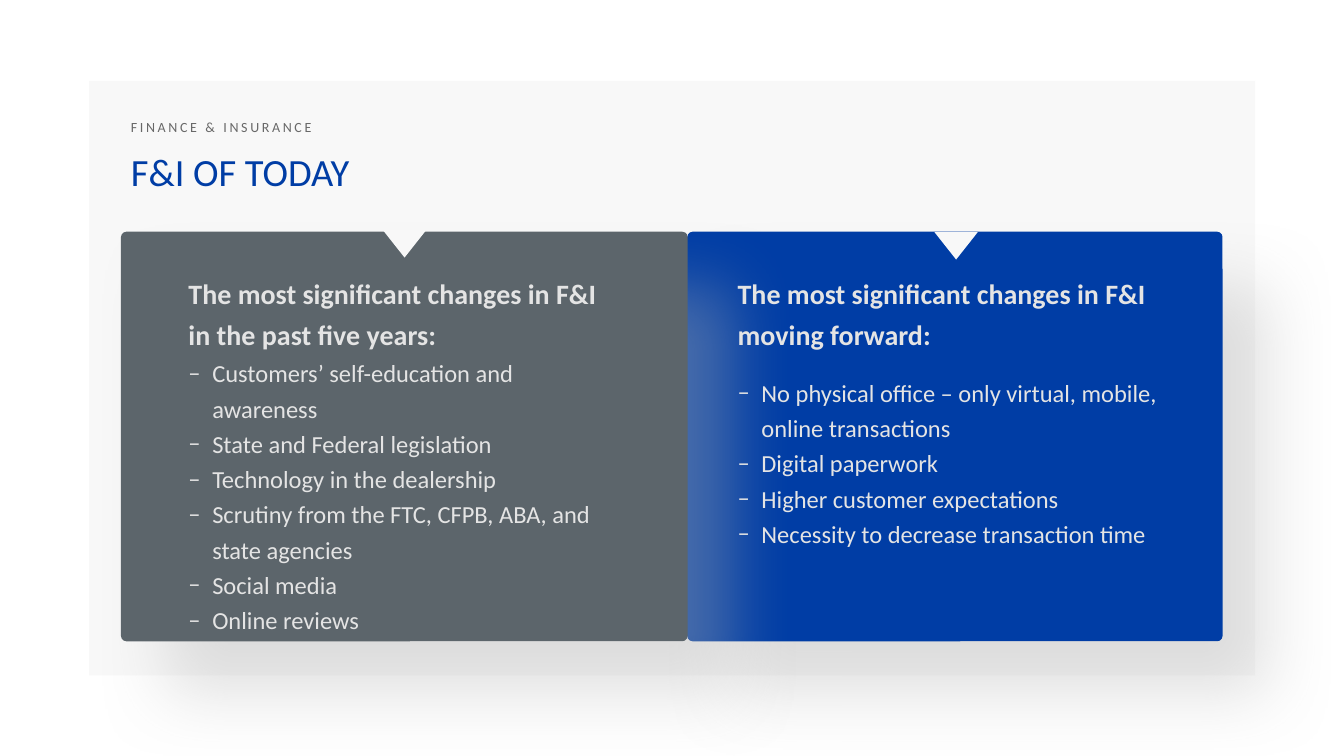
from lxml.etree import SubElement as Sub
from pptx import Presentation
from pptx.dml.color import RGBColor
from pptx.enum.shapes import MSO_SHAPE as Geo
from pptx.enum.text import MSO_AUTO_SIZE as Fit
from pptx.oxml.ns import qn
from pptx.util import Cm, Pt

PALE = RGBColor(0xF8, 0xF8, 0xF8)
BLUE = RGBColor(0x00, 0x3D, 0xA5)
SLATE = RGBColor(0x5C, 0x65, 0x6B)
GREY = RGBColor(0x68, 0x68, 0x68)
LIGHT = RGBColor(0xE4, 0xE4, 0xE4)
SHADE = RGBColor(0xB4, 0xB4, 0xB4)

TITLE = {"size": Pt(27.5)}
LABEL = {"size": Pt(10)}
HEAD = {"size": Pt(20), "bold": True}
ITEM = {"size": Pt(17.5)}

PAST = [
    "Customers’ self-education and awareness",
    "State and Federal legislation",
    "Technology in the dealership",
    "Scrutiny from the FTC, CFPB, ABA, and state agencies",
    "Social media",
    "Online reviews",
]
NEXT = [
    "No physical office – only virtual, mobile, online transactions",
    "Digital paperwork",
    "Higher customer expectations",
    "Necessity to decrease transaction time",
]


def add_box(slide, geo, box, color):
    shape = slide.shapes.add_shape(geo, *map(Cm, box))
    shape.shadow.inherit = False
    shape.fill.solid()
    shape.fill.fore_color.rgb = color
    shape.line.fill.background()
    return shape


def add_card(slide, left, width, color):
    card = add_box(slide, Geo.ROUNDED_RECTANGLE, (left, 5.84, width, 10.32), color)
    card.adjustments[0] = 0.013
    effects = card.element.spPr.find(qn("a:effectLst"))
    glow = Sub(effects, qn("a:outerShdw"), blurRad=str(Pt(50)),
               dist=str(Pt(50)), dir=str(50 * 60000), rotWithShape="0")
    tint = Sub(glow, qn("a:srgbClr"), val=str(SHADE))
    Sub(tint, qn("a:alpha"), val="40000")


def add_notch(slide, left, top):
    notch = add_box(slide, Geo.ISOSCELES_TRIANGLE, (left, top, 1.09, 0.69), PALE)
    notch.rotation = 180


def add_text(slide, box, lines, style, color, lead=None):
    frame = slide.shapes.add_textbox(*map(Cm, box)).text_frame
    frame.word_wrap = True
    frame.auto_size = Fit.SHAPE_TO_FIT_TEXT
    frame.text = "\n".join(lines)
    for para in frame.paragraphs:
        para.line_spacing = lead
        font = para.runs[0].font
        font.name = "Calibri"
        font.color.rgb = color
        for key, value in style.items():
            setattr(font, key, value)
    return frame


def add_list(slide, box, items):
    frame = add_text(slide, box, items, ITEM, LIGHT, 1.2)
    for para in frame.paragraphs:
        props = para._p.get_or_add_pPr()
        props.set("marL", str(Cm(0.6)))
        props.set("indent", str(Cm(-0.6)))
        Sub(props, qn("a:buFont"), typeface="Calibri")
        Sub(props, qn("a:buChar"), char="–")


def main():
    deck = Presentation()
    deck.slide_width, deck.slide_height = Cm(33.87), Cm(19.05)
    slide = deck.slides.add_slide(deck.slide_layouts[6])

    add_box(slide, Geo.RECTANGLE, (2.25, 2.04, 29.38, 14.98), PALE)
    add_text(slide, (3.05, 3.61, 6.55, 1.42), ["F&I OF TODAY"], TITLE, BLUE)
    label = add_text(slide, (3.05, 2.87, 5.33, 0.69), ["FINANCE & INSURANCE"], LABEL, GREY)
    label.paragraphs[0].runs[0].font._element.set("spc", "190")

    add_card(slide, 17.32, 13.49, BLUE)
    add_card(slide, 3.05, 14.28, SLATE)
    add_notch(slide, 9.65, 5.8)
    add_notch(slide, 23.55, 5.85)

    add_text(slide, (4.5, 6.68, 11.4, 2.24),
             ["The most significant changes in F&I in the past five years:"],
             HEAD, LIGHT, 1.2)
    add_text(slide, (18.34, 6.68, 11.48, 2.24),
             ["The most significant changes in F&I", "moving forward:"],
             HEAD, LIGHT, 1.2)
    add_list(slide, (4.5, 8.76, 11.4, 7.37), PAST)
    add_list(slide, (18.34, 9.25, 11.48, 4.67), NEXT)

    deck.save("out.pptx")


if __name__ == "__main__":
    main()
